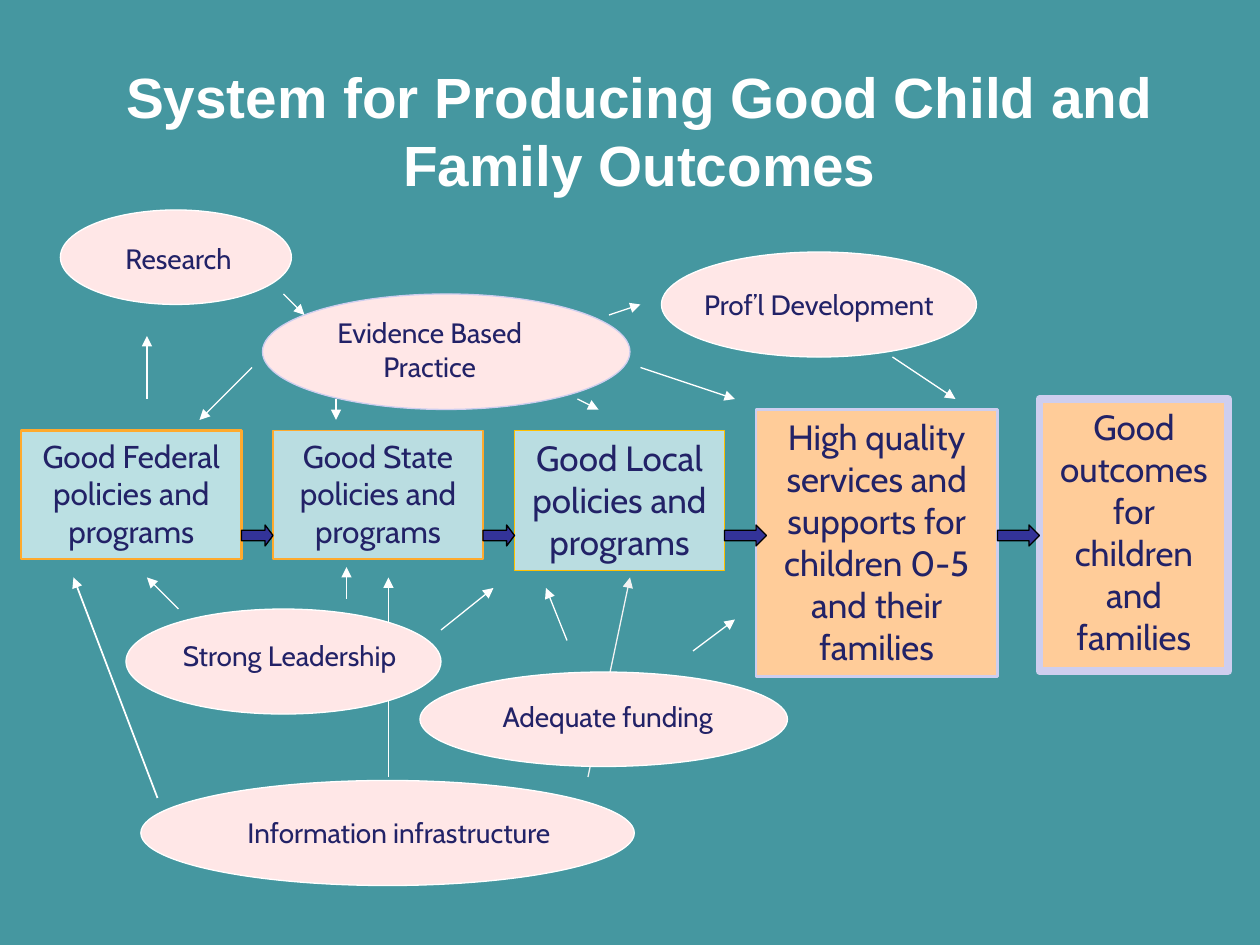
from lxml import etree
from pptx import Presentation
from pptx.dml.color import RGBColor
from pptx.enum import shapes, text
from pptx.oxml.ns import qn
from pptx.util import Pt

NAVY, WHITE, PINK, LAVENDER = "222267", "FFFFFF", "FFE7E7", "CECEEF"
PEACH, ORANGE = "FFCC99", "FFAA2D"

STAGES = [
    ("Good Federal policies and programs", 0, 18, 126, 73.5, "BBE0E3", ORANGE, 1.5, 18),
    ("Good State policies and programs", 144, 18, 120, 73.5, "BADDE1", ORANGE, 1, 18),
    ("Good Local policies and programs", 282, 18, 120, 80, "BADDE1", "FFC000", 0.75, 20),
    ("High quality services and supports for children 0-5 and their families",
     420, 6, 138, 152.5, PEACH, LAVENDER, 1.5, 20),
    ("Good outcomes for children and families", 582, 0, 108, 155.5, PEACH, LAVENDER, 4.5, 20),
]
STAGE_ARROWS = [(18, 0.375), (18, 0.375), (24, 0.5), (24, 0.5)]

FACTORS = [
    ("Strong Leadership", (72, 348, 180, 60), (-14.5, 13.5, 216, 26.5), WHITE, True),
    ("Evidence Based Practice", (150, 168, 210, 66), (17, 9, 157, 46), LAVENDER, True),
    ("Information infrastructure", (80.5, 446, 282, 60), (3.5, 16.5, 288, 26.5), WHITE, True),
    ("Research", (34.5, 120, 132, 54), (28, 14.5, 79, 26.5), WHITE, False),
    ("Prof’l Development", (378, 144, 180, 60), (15, 16.5, 150, 26.5), WHITE, False),
    ("Adequate funding", (240, 384, 210, 54), (18, 12, 178.5, 26.5), WHITE, True),
]

LINKS_BEHIND = [
    (222, 444, 222, 330, WHITE, 1),
    (336, 444, 360, 330, "F2F2F2", 0.75),
]
LINKS = [
    (396, 372, 420, 354, WHITE, 0.75),
    (510, 204, 546, 228, WHITE, 0.75),
    (252, 360, 282, 336, WHITE, 0.75),
    (102, 348, 84, 330, WHITE, 0.75),
    (198, 342, 198, 324, WHITE, 0.75),
    (84, 228, 84, 192, WHITE, 0.75),
    (162, 168, 174, 180, WHITE, 0.75),
    (348, 180, 366, 174, WHITE, 0.75),
    (144, 210, 114, 240, WHITE, 0.75),
    (192, 228, 192, 240, WHITE, 0.75),
    (330, 228, 342, 234, WHITE, 0.75),
    (366, 210, 420, 228, WHITE, 0.75),
    (90, 456, 42, 330, WHITE, 1),
    (324, 366, 312, 336, WHITE, 0.75),
]


def color(hex_string):
    return RGBColor.from_string(hex_string)


def write(frame, words, size, font="Cabin", ink=NAVY, bold=False, anchor="TOP", wrap=True):
    frame.word_wrap = wrap
    frame.vertical_anchor = text.MSO_ANCHOR[anchor]
    paragraph = frame.paragraphs[0]
    paragraph.alignment = text.PP_ALIGN.CENTER
    run = paragraph.add_run()
    run.text = words
    run.font.name, run.font.size, run.font.bold = font, Pt(size), bold
    run.font.color.rgb = color(ink)


def add_text(slide, box, words, size, **style):
    frame = slide.shapes.add_textbox(*map(Pt, box)).text_frame
    write(frame, words, size, **style)


def add_filled(slide, kind, box, fill, outline, weight):
    shape = slide.shapes.add_shape(kind, *map(Pt, box))
    shape.shadow.inherit = False
    shape.fill.solid()
    shape.fill.fore_color.rgb = color(fill)
    shape.line.color.rgb = color(outline)
    shape.line.width = Pt(weight)
    return shape


def add_title(slide, box):
    add_text(slide, box, "System for Producing Good Child and Family Outcomes", 32.4,
             font="Arial", ink=WHITE, bold=True, anchor="MIDDLE")


def add_links(slide, left, top, links):
    for x1, y1, x2, y2, ink, weight in links:
        link = slide.shapes.add_connector(
            shapes.MSO_CONNECTOR.STRAIGHT,
            Pt(left + x1), Pt(top + y1), Pt(left + x2), Pt(top + y2))
        link.line.color.rgb = color(ink)
        link.line.width = Pt(weight)
        etree.SubElement(link.line._get_or_add_ln(), qn("a:tailEnd"), type="triangle")
        etree.SubElement(link._element.spPr, qn("a:effectLst"))


def add_factors(slide, left, top):
    for words, (x, y, width, height), (dx, dy, label_width, label_height), outline, wrap in FACTORS:
        add_filled(slide, shapes.MSO_SHAPE.OVAL, (left + x, top + y, width, height),
                   PINK, outline, 0.75)
        add_text(slide, (left + x + dx, top + y + dy, label_width, label_height),
                 words, 16, wrap=wrap)


def add_pipeline(slide, left, top):
    for words, x, y, width, height, fill, outline, weight, size in STAGES:
        stage = add_filled(slide, shapes.MSO_SHAPE.RECTANGLE,
                           (left + x, top + y, width, height), fill, outline, weight)
        write(stage.text_frame, words, size)
    for stage, (length, head) in zip(STAGES, STAGE_ARROWS):
        right_edge = left + stage[1] + stage[3]
        arrow = add_filled(slide, shapes.MSO_SHAPE.RIGHT_ARROW,
                           (right_edge, top + 72, length, 12), "333399", "000000", 0.75)
        arrow.adjustments[0], arrow.adjustments[1] = 0.5, head


def main():
    deck = Presentation()
    deck.slide_width, deck.slide_height = Pt(720), Pt(540)
    slide = deck.slides.add_slide(deck.slide_layouts[6])
    slide.background.fill.solid()
    slide.background.fill.fore_color.rgb = color("4597A0")
    add_links(slide, 0, 0, LINKS_BEHIND)
    add_title(slide, (49.5, 29, 632, 90))
    add_pipeline(slide, 12, 228)
    add_factors(slide, 0, 0)
    add_links(slide, 0, 0, LINKS)
    deck.save("out.pptx")


if __name__ == "__main__":
    main()
